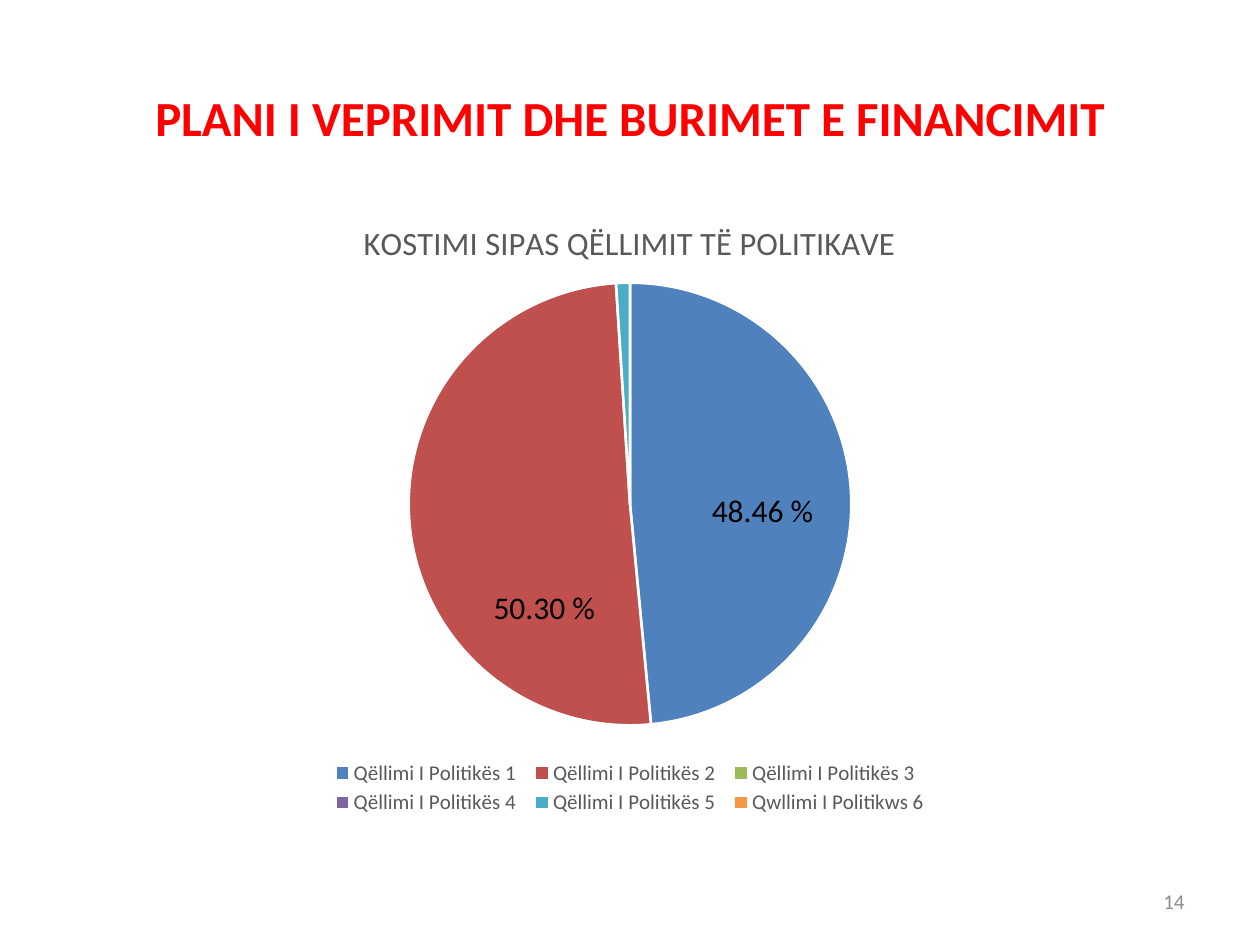
"""Build the slide on the cost of the action plan by policy goal."""
from lxml import etree
from pptx import Presentation
from pptx.chart.data import CategoryChartData
from pptx.dml.color import RGBColor
from pptx.enum.chart import XL_CHART_TYPE, XL_LEGEND_POSITION
from pptx.enum.text import MSO_ANCHOR, PP_ALIGN
from pptx.oxml.ns import qn
from pptx.util import Cm, Pt

PIE = XL_CHART_TYPE.PIE
BOTTOM = XL_LEGEND_POSITION.BOTTOM
TOP, MIDDLE = MSO_ANCHOR.TOP, MSO_ANCHOR.MIDDLE
LEFT, CENTER, RIGHT = PP_ALIGN.LEFT, PP_ALIGN.CENTER, PP_ALIGN.RIGHT

BLACK = RGBColor(0x00, 0x00, 0x00)
WHITE = RGBColor(0xFF, 0xFF, 0xFF)
RED = RGBColor(0xFF, 0x00, 0x00)
DARK_GREY = RGBColor(0x59, 0x59, 0x59)
GREY = RGBColor(0x8C, 0x8C, 0x8C)
GOALS = [
    ("Qëllimi I Politikës 1", 48, RGBColor(0x4F, 0x81, 0xBD)),
    ("Qëllimi I Politikës 2", 50, RGBColor(0xC0, 0x50, 0x4D)),
    ("Qëllimi I Politikës 3", 0, RGBColor(0x9B, 0xBB, 0x59)),
    ("Qëllimi I Politikës 4", 0, RGBColor(0x80, 0x64, 0xA2)),
    ("Qëllimi I Politikës 5", 1, RGBColor(0x4B, 0xAC, 0xC6)),
    ("Qwllimi I Politikws 6", 0, RGBColor(0xF7, 0x96, 0x46)),
]
FONT = "Calibri"


def style(font, size, color, bold=False):
    font.name, font.size, font.bold = FONT, Pt(size), bold
    font.color.rgb = color


def place(part, **settings):
    layout = part.find(qn("c:layout"))
    if layout is None:
        layout = etree.Element(qn("c:layout"))
        part.insert(1, layout)
    manual = etree.SubElement(layout, qn("c:manualLayout"))
    for key, value in settings.items():
        etree.SubElement(manual, qn(f"c:{key}")).set("val", str(value))


prs = Presentation()
prs.slide_width, prs.slide_height = Cm(25.4), Cm(19.05)
slide = prs.slides.add_slide(prs.slide_layouts[6])

costs = CategoryChartData()
costs.categories = [name for name, share, color in GOALS]
costs.add_series("Series 1", [share for name, share, color in GOALS])
chart = slide.shapes.add_chart(
    PIE, Cm(1.27), Cm(3.94), Cm(22.86), Cm(12.57), costs).chart
style(chart.font, 10, BLACK)

heading = chart.chart_title.text_frame.paragraphs[0].add_run()
heading.text = "KOSTIMI SIPAS QËLLIMIT TË POLITIKAVE"
style(heading.font, 18.6, DARK_GREY)
chart.chart_title.include_in_layout = False

chart.has_legend = True
legend = chart.legend
legend.position = BOTTOM
legend.include_in_layout = False
style(legend.font, 12, DARK_GREY)

pie = chart.plots[0]
pie.vary_by_categories = True
for index, (name, share, color) in enumerate(GOALS):
    slice_format = pie.series[0].points[index].format
    slice_format.fill.solid()
    slice_format.fill.fore_color.rgb = color
    slice_format.line.color.rgb = WHITE
    slice_format.line.width = Pt(1.5)

plot_area = chart.element.find(".//" + qn("c:plotArea"))
if plot_area.find(qn("c:layout")) is None:
    plot_area.insert(0, etree.Element(qn("c:layout")))
place(plot_area, layoutTarget="inner", xMode="edge", yMode="edge",
      x=0.3, y=0.14, w=0.4, h=0.71)
place(chart.element.find(".//" + qn("c:title")),
      xMode="edge", yMode="edge", x=0.26, y=0.03)
place(chart.element.find(".//" + qn("c:legend")),
      xMode="edge", yMode="edge", x=0.23, y=0.9, w=0.54, h=0.1)

TEXTS = [
    ("PLANI I VEPRIMIT DHE BURIMET E FINANCIMIT",
     (1.27, 0.76, 22.86, 3.18), 28, RED, True, CENTER, MIDDLE, True),
    ("14", (18.21, 17.65, 5.92, 1.02), 12, GREY, False, RIGHT, MIDDLE, True),
    ("48.46 %", (14.1, 9.78, 2.59, 1.02), 18, BLACK, False, LEFT, TOP, False),
    ("50.30 %", (9.7, 11.73, 2.59, 1.02), 18, BLACK, False, LEFT, TOP, False),
]
for text, box, size, color, bold, align, anchor, wrap in TEXTS:
    frame = slide.shapes.add_textbox(*map(Cm, box)).text_frame
    frame.word_wrap = wrap
    frame.vertical_anchor = anchor
    paragraph = frame.paragraphs[0]
    paragraph.alignment = align
    run = paragraph.add_run()
    run.text = text
    style(run.font, size, color, bold)

prs.save("out.pptx")
